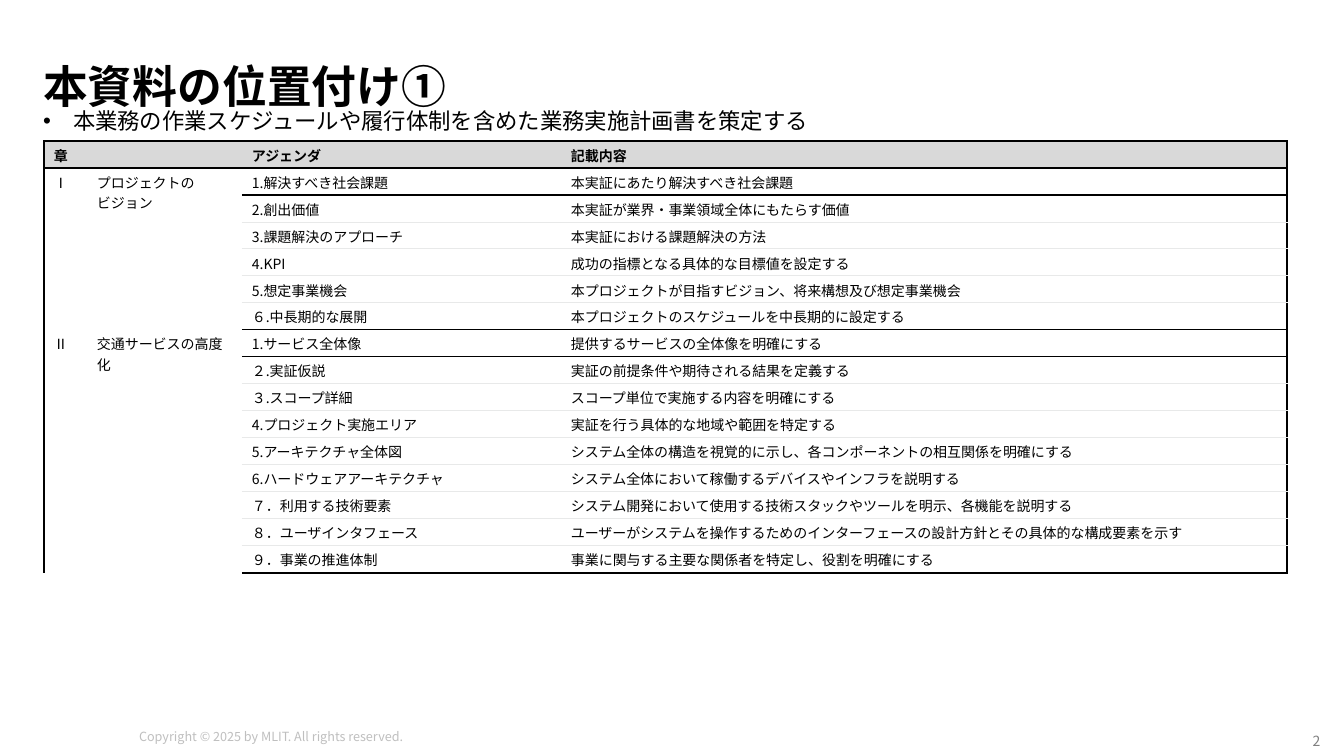
"""Build the slide that places this document among its chapters."""
from dataclasses import dataclass

from lxml import etree
from pptx import Presentation, util as u
from pptx.dml.color import RGBColor
from pptx.enum import text
from pptx.oxml.ns import qn

PX = 914400 / 100.8
FONT = "Noto Sans CJK JP"
COLORS = {"ink": "000000", "header": "D9D9D9", "rule": "E8E9E9",
          "paper": "FFFFFF", "copyright": "BFBFBF", "number": "808080"}
COLUMNS = [43, 155, 319, 726]
ROW_HEIGHT = 27
Line = tuple[str, float] | None


@dataclass(frozen=True)
class Label:
    """A text box with a single paragraph."""
    words: str
    box: tuple[int, int, int, int]
    size: int
    color: str = "ink"
    bold: bool = False
    wrap: bool = True
    align: text.PP_ALIGN = text.PP_ALIGN.LEFT
    anchor: text.MSO_ANCHOR = text.MSO_ANCHOR.TOP
    spacing: float = 1.0
    inset: int = 10
    bullet: bool = False


@dataclass(frozen=True)
class Chapter:
    """A numbered chapter with its agenda items and their contents."""
    number: str
    title: str
    items: list[tuple[str, str]]
    first_line: float


LABELS = [
    Label("Copyright © 2025 by MLIT. All rights reserved.",
          (129, 724, 350, 25), 9, "copyright", wrap=False),
    Label("2", (1301, 729, 31, 25), 10, "number", wrap=False,
          align=text.PP_ALIGN.CENTER, inset=4),
    Label("本資料の位置付け①", (33, 67, 1254, 47), 32, bold=True,
          anchor=text.MSO_ANCHOR.MIDDLE, spacing=0.8),
    Label("本業務の作業スケジュールや履行体制を含めた業務実施計画書を策定する",
          (33, 105, 1254, 73), 16, spacing=0.9, bullet=True),
]

CHAPTERS = [
    Chapter("Ⅰ", "プロジェクトの\nビジョン", [
        ("1.解決すべき社会課題", "本実証にあたり解決すべき社会課題"),
        ("2.創出価値", "本実証が業界・事業領域全体にもたらす価値"),
        ("3.課題解決のアプローチ", "本実証における課題解決の方法"),
        ("4.KPI", "成功の指標となる具体的な目標値を設定する"),
        ("5.想定事業機会", "本プロジェクトが目指すビジョン、将来構想及び想定事業機会"),
        ("６.中長期的な展開", "本プロジェクトのスケジュールを中長期的に設定する"),
    ], 1.5),
    Chapter("Ⅱ", "交通サービスの高度化", [
        ("1.サービス全体像", "提供するサービスの全体像を明確にする"),
        ("２.実証仮説", "実証の前提条件や期待される結果を定義する"),
        ("３.スコープ詳細", "スコープ単位で実施する内容を明確にする"),
        ("4.プロジェクト実施エリア", "実証を行う具体的な地域や範囲を特定する"),
        ("5.アーキテクチャ全体図",
         "システム全体の構造を視覚的に示し、各コンポーネントの相互関係を明確にする"),
        ("6.ハードウェアアーキテクチャ",
         "システム全体において稼働するデバイスやインフラを説明する"),
        ("７．利用する技術要素",
         "システム開発において使用する技術スタックやツールを明示、各機能を説明する"),
        ("８．ユーザインタフェース",
         "ユーザーがシステムを操作するためのインターフェースの設計方針とその具体的な構成要素を示す"),
        ("９．事業の推進体制", "事業に関与する主要な関係者を特定し、役割を明確にする"),
    ], 1.0),
]


def px(n: int) -> u.Emu:
    """Turn px into EMU."""
    return u.Emu(round(n * PX))


def add_run(p, words: str, size: int, color: str, bold: bool) -> None:
    """Add one styled run to a paragraph."""
    r = p.add_run()
    r.text = words
    r.font.size = u.Pt(size)
    r.font.bold = bold
    r.font.name = FONT
    r.font.color.rgb = RGBColor.from_string(COLORS[color])
    etree.SubElement(r.font._element, qn("a:ea"), typeface=FONT)


def add_label(s, label: Label) -> None:
    """Draw a text box."""
    tf = s.shapes.add_textbox(*map(px, label.box)).text_frame
    tf.word_wrap = label.wrap
    tf.vertical_anchor = label.anchor
    tf.margin_left = tf.margin_right = px(label.inset)
    tf.margin_top = tf.margin_bottom = px(min(label.inset, 5))
    p = tf.paragraphs[0]
    p.alignment = label.align
    p.line_spacing = label.spacing
    if label.bullet:
        props = p._p.get_or_add_pPr()
        props.set("marL", str(px(30)))
        props.set("indent", str(-px(30)))
        etree.SubElement(props, qn("a:buFont"), typeface="Arial")
        etree.SubElement(props, qn("a:buChar"), char="•")
    add_run(p, label.words, label.size, label.color, label.bold)


def set_borders(cell, sides: dict[str, Line]) -> None:
    """Set the four borders of a cell ahead of its fill."""
    props = cell._tc.get_or_add_tcPr()
    for i, side in enumerate("LRTB"):
        line = sides.get(side)
        ln = etree.Element(qn(f"a:ln{side}"))
        props.insert(i, ln)
        if line is None:
            etree.SubElement(ln, qn("a:noFill"))
        else:
            ln.set("w", str(u.Pt(line[1])))
            fill = etree.SubElement(ln, qn("a:solidFill"))
            etree.SubElement(fill, qn("a:srgbClr"), val=COLORS[line[0]])


def fill_cell(cell, words: str, header: bool = False) -> None:
    """Write the text of a cell."""
    cell.margin_top, cell.margin_bottom = px(4), px(1)
    cell.margin_left = cell.margin_right = px(10)
    p = cell.text_frame.paragraphs[0]
    for i, part in enumerate(words.split("\n")):
        if i:
            p.add_line_break()
        add_run(p, part, 10, "ink", header)


def add_agenda(s, chapters: list[Chapter]) -> None:
    """Draw the table of chapters."""
    count = 1 + sum(len(c.items) for c in chapters)
    table = s.shapes.add_table(count, len(COLUMNS), px(44), px(141),
                               px(sum(COLUMNS)), px(count * ROW_HEIGHT)).table
    table.horz_banding = table.first_row = False
    for column, width in zip(table.columns, COLUMNS):
        column.width = px(width)
    for row in table.rows:
        row.height = px(ROW_HEIGHT)

    lines: list[Line] = [("ink", 1.5)] * 2
    starts = []
    for c in chapters:
        starts.append(len(lines) - 1)
        lines += [("ink", c.first_line)]
        lines += [("rule", 0.75)] * (len(c.items) - 2) + [("ink", 1.0)]
    lines[-1] = ("ink", 1.5)
    bounds = {0, count, *starts}
    for y in range(count):
        for x in range(len(COLUMNS)):
            cell = table.cell(y, x)
            cell.fill.solid()
            cell.fill.fore_color.rgb = RGBColor.from_string(
                COLORS["paper" if y else "header"])
            set_borders(cell, {
                "L": ("ink", 1.0) if x == 0 else None,
                "R": ("ink", 1.5) if x == len(COLUMNS) - 1 else None,
                "T": lines[y] if x > 1 or y in bounds else None,
                "B": lines[y + 1] if x > 1 or y + 1 in bounds else None})

    table.cell(0, 0).merge(table.cell(0, 1))
    for x, words in {0: "章", 2: "アジェンダ", 3: "記載内容"}.items():
        fill_cell(table.cell(0, x), words, header=True)
    for start, c in zip(starts, chapters):
        for x, words in enumerate((c.number, c.title)):
            cell = table.cell(start, x)
            cell.merge(table.cell(start + len(c.items) - 1, x))
            fill_cell(cell, words)
        for y, item in enumerate(c.items, start):
            for x, words in enumerate(item, 2):
                fill_cell(table.cell(y, x), words)


def main() -> None:
    """Build and save the deck."""
    prs = Presentation()
    prs.slide_width, prs.slide_height = px(1344), px(756)
    s = prs.slides.add_slide(prs.slide_layouts[6])
    add_agenda(s, CHAPTERS)
    for label in LABELS:
        add_label(s, label)
    prs.save("out.pptx")


if __name__ == "__main__":
    main()
